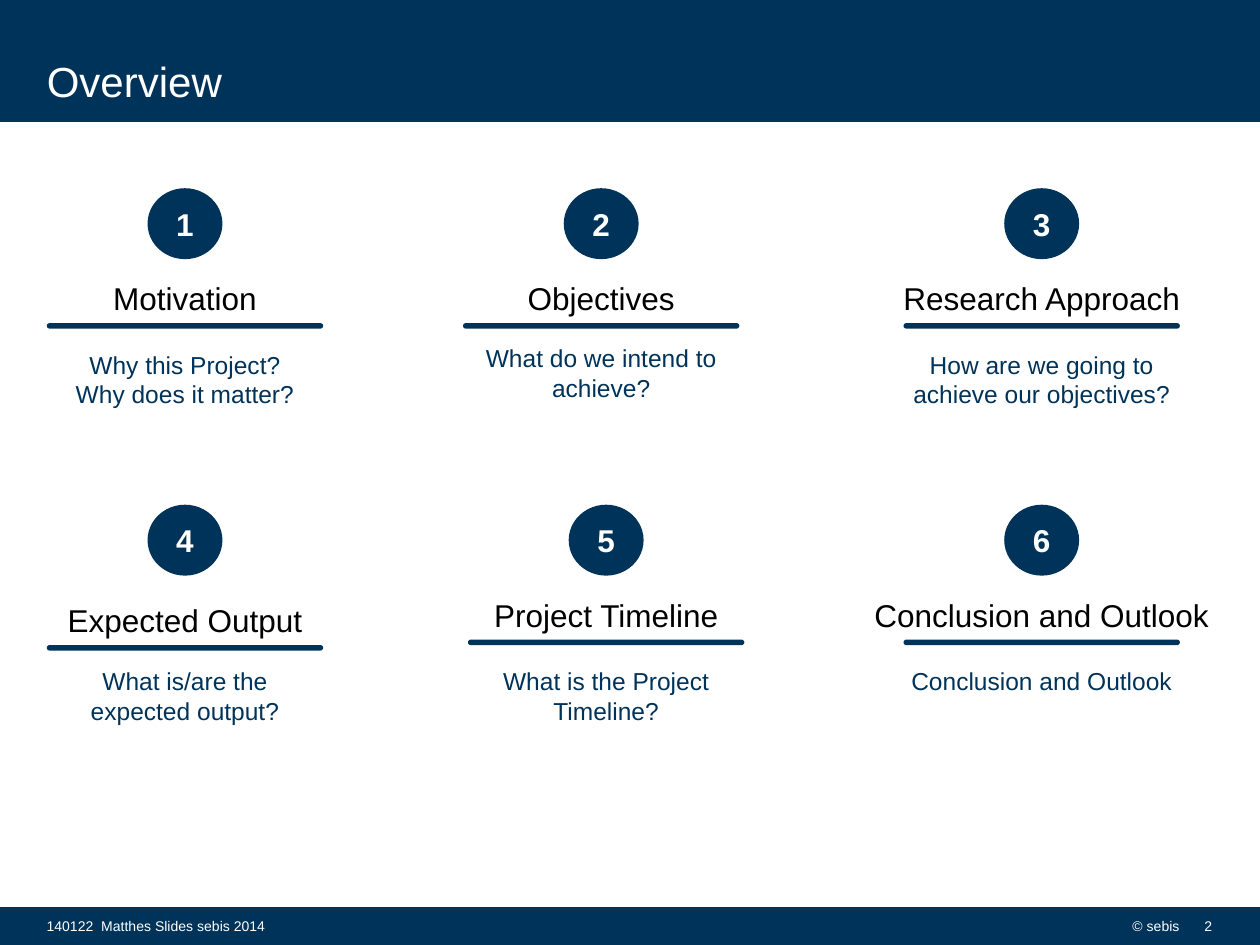
from dataclasses import dataclass

from pptx import Presentation
from pptx.dml.color import RGBColor
from pptx.enum.shapes import MSO_SHAPE as Shape
from pptx.enum.text import MSO_ANCHOR as Anchor, MSO_AUTO_SIZE as AutoSize, PP_ALIGN as Align
from pptx.util import Cm, Pt


@dataclass(frozen=True)
class Theme:
    """Colours, font and type sizes of the deck."""
    navy: RGBColor = RGBColor(0x00, 0x33, 0x59)
    white: RGBColor = RGBColor(0xFF, 0xFF, 0xFF)
    black: RGBColor = RGBColor(0x00, 0x00, 0x00)
    font: str = "Arial"
    title: int = 24
    heading: int = 18
    body: int = 14
    footer: int = 8


@dataclass(frozen=True)
class Column:
    """Centre of a column and the widths of its texts, in cm."""
    center: float
    heading: float
    body: float


@dataclass(frozen=True)
class Topic:
    """One agenda topic, with small offsets of its parts in cm."""
    heading: str
    lines: tuple
    shift: float = 0
    heading_drop: float = 0
    body_drop: float = 0


THEME = Theme()
WIDTH, HEIGHT = 25.4, 19.05
COLUMNS = (Column(3.73, 5.54, 5.54), Column(12.12, 5.54, 5.54), Column(21, 7.82, 6.02))
ROW_TOPS = (3.81, 10.19)
TOPICS = (
    Topic("Motivation", ("Why this Project?", "Why does it matter?")),
    Topic("Objectives", ("What do we intend to achieve?",), body_drop=-0.13),
    Topic("Research Approach", ("How are we going to achieve our objectives?",)),
    Topic("Expected Output", ("What is/are the expected output?",), heading_drop=0.11),
    Topic("Project Timeline", ("What is the Project Timeline?",), shift=0.1),
    Topic("Conclusion and Outlook", ("Conclusion and Outlook",)),
)


def write(tf, lines, size, color, align=Align.LEFT, bold=False):
    """Fill a text frame with one paragraph of one or more lines."""
    p = tf.paragraphs[0]
    p.alignment = align
    for i, line in enumerate(lines):
        if i:
            p.add_line_break()
        r = p.add_run()
        r.text = line
        r.font.name = THEME.font
        r.font.size = Pt(size)
        r.font.bold = bold
        r.font.color.rgb = color


def add_block(shapes, kind, box, line_width):
    """Add a navy preset shape without shadow."""
    sp = shapes.add_shape(kind, *map(Cm, box))
    sp.shadow.inherit = False
    sp.fill.solid()
    sp.fill.fore_color.rgb = THEME.navy
    sp.line.color.rgb = THEME.navy
    sp.line.width = Pt(line_width)
    return sp


def add_text(shapes, box, lines, size, color, align, wrap=True):
    """Add a text box and return its frame."""
    tf = shapes.add_textbox(*map(Cm, box)).text_frame
    tf.word_wrap = wrap
    write(tf, lines, size, color, align)
    return tf


def add_header(s, left, top, width, height):
    """Draw the header band and set the title on it."""
    add_block(s.shapes, Shape.RECTANGLE, (left, top, width, height), 1.35)
    title = s.shapes.title
    title.element.getparent().append(title.element)
    title.left, title.top = Cm(left + 0.69), Cm(top + 0.1)
    title.width, title.height = Cm(20.93), Cm(2.01)
    tf = title.text_frame
    tf.vertical_anchor = Anchor.BOTTOM
    tf.margin_top = tf.margin_bottom = 0
    write(tf, ("Overview",), THEME.title, THEME.white)


def add_footer(s, left, top, width, height):
    """Draw the footer band with source, copyright and page number."""
    add_block(s.shapes, Shape.RECTANGLE, (left, top, width, height), 1.35)
    entries = (
        (0.69, 12.01, "140122  Matthes Slides sebis 2014", Align.LEFT),
        (19.56, 4.47, "© sebis", Align.RIGHT),
        (24, 0.69, "2", Align.RIGHT),
    )
    for x, w, text, align in entries:
        tf = add_text(s.shapes, (left + x, top - 0.05, w, 0.81), (text,),
                      THEME.footer, THEME.white, align, wrap=align == Align.LEFT)
        tf.vertical_anchor = Anchor.MIDDLE


def add_topic(s, number, topic, column, top):
    """Draw a numbered circle above a heading, a rule and a question."""
    center = column.center + topic.shift

    def centered(width, offset, height):
        """Give a box centred on the column."""
        return center - width / 2, top + offset, width, height

    circle = add_block(s.shapes, Shape.OVAL, centered(1.48, 0, 1.4), 0.85)
    tf = circle.text_frame
    tf.vertical_anchor = Anchor.MIDDLE
    tf.margin_left = tf.margin_right = 0
    write(tf, (str(number),), THEME.heading, THEME.white, Align.CENTER, bold=True)

    shapes = s.shapes.add_group_shape().shapes
    drop = topic.heading_drop
    rule = add_block(shapes, Shape.ROUNDED_RECTANGLE, centered(5.54, 2.72 + drop, 0.08), 0.85)
    rule.adjustments[0] = 0.5
    texts = (
        (centered(column.heading, 1.7 + drop, 1.02), (topic.heading,),
         THEME.heading, THEME.black),
        (centered(column.body, 3.12 + topic.body_drop, 1.45), topic.lines,
         THEME.body, THEME.navy),
    )
    for box, lines, size, color in texts:
        tf = add_text(shapes, box, lines, size, color, Align.CENTER)
        tf.auto_size = AutoSize.SHAPE_TO_FIT_TEXT


def main():
    """Build the overview slide."""
    prs = Presentation()
    prs.slide_width, prs.slide_height = Cm(WIDTH), Cm(HEIGHT)
    s = prs.slides.add_slide(prs.slide_layouts[5])
    add_header(s, 0, 0.02, WIDTH, 2.42)
    add_footer(s, 0, 18.31, WIDTH, 0.74)
    for i, topic in enumerate(TOPICS):
        row, col = divmod(i, len(COLUMNS))
        add_topic(s, i + 1, topic, COLUMNS[col], ROW_TOPS[row])
    prs.save("out.pptx")


if __name__ == "__main__":
    main()
